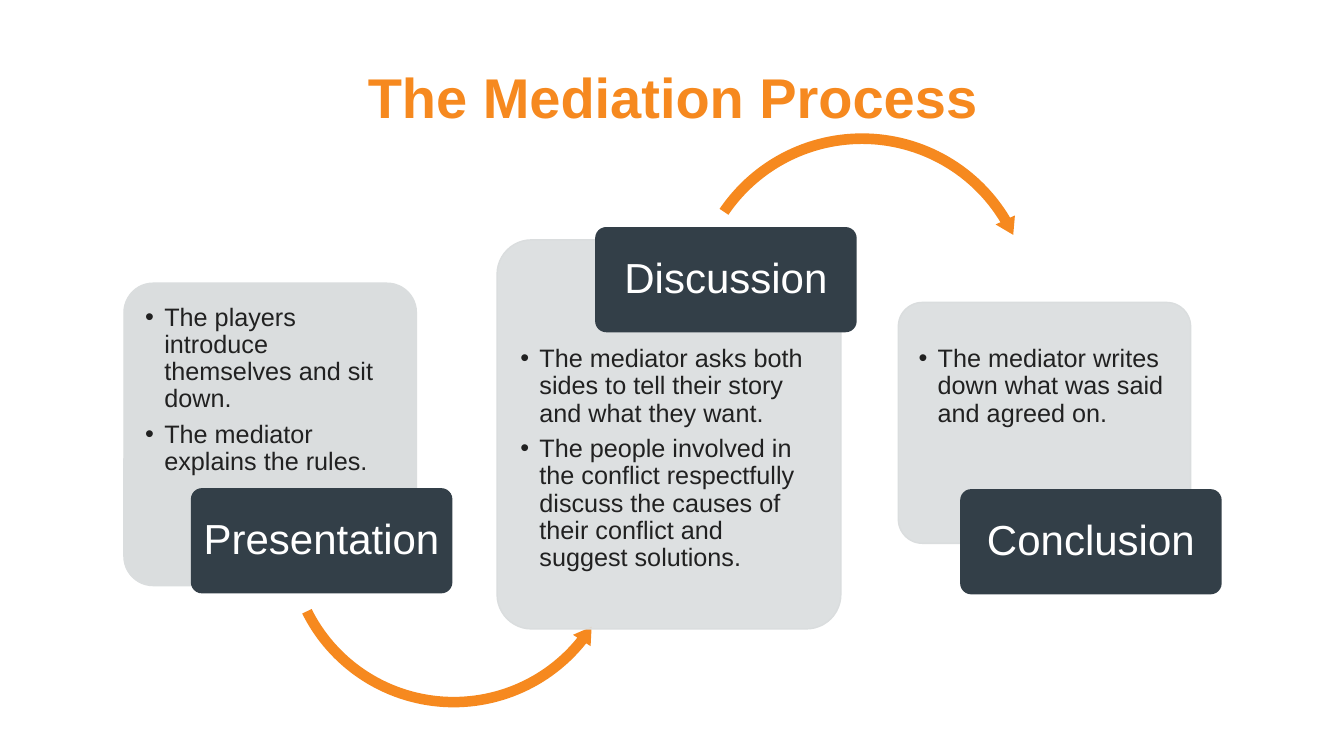
from dataclasses import dataclass

import pptx
import pptx.dml.color
import pptx.enum.shapes
import pptx.enum.text
import pptx.oxml
import pptx.oxml.ns
import pptx.util

EMU_PER_PX = 9144
ORANGE = pptx.dml.color.RGBColor(0xF6, 0x89, 0x1F)
SILVER = pptx.dml.color.RGBColor(0xDA, 0xDD, 0xDE)
SLATE = pptx.dml.color.RGBColor(0x33, 0x3F, 0x48)
INK = pptx.dml.color.RGBColor(0x21, 0x21, 0x21)
WHITE = pptx.dml.color.RGBColor(0xFF, 0xFF, 0xFF)

PRESET = pptx.enum.shapes.MSO_SHAPE
ALIGN = pptx.enum.text.PP_ALIGN
ANCHOR = pptx.enum.text.MSO_ANCHOR
COMPARISON_LAYOUT = 4
UNUSED_PLACEHOLDER = 3
LABEL_WIDTH, LABEL_HEIGHT = 258, 103
CORNER = 0.1

TITLE_FONT = {"name": "Arial", "size": pptx.util.Pt(40), "bold": True}
LABEL_FONT = {"name": "Arial", "size": pptx.util.Pt(30), "bold": False}
LIST_FONT = {"name": "Arial", "size": pptx.util.Pt(18), "bold": False}


@dataclass(frozen=True)
class Rect:
    left: int
    top: int
    width: int
    height: int


@dataclass(frozen=True)
class Arrow:
    preset: pptx.enum.shapes.MSO_SHAPE
    area: Rect
    adjustments: tuple[float, ...]


@dataclass(frozen=True)
class Stage:
    name: str
    card: Rect
    opacity: int
    list_area: Rect
    placeholder: int
    items: tuple[str, ...]
    label_left: int
    label_top: int
    arrow: Arrow | None = None


STAGES = (
    Stage(
        "Presentation", Rect(123, 281, 290, 300), 100, Rect(130, 288, 276, 222), 1,
        ("The players introduce themselves and sit down.",
         "The mediator explains the rules."),
        190, 485,
        Arrow(PRESET.LEFT_CIRCULAR_ARROW, Rect(277, 361, 346, 346),
              (0.03, 3.54, 23.16, 92.11, 0.03)),
    ),
    Stage(
        "Discussion", Rect(493, 238, 341, 386), 90, Rect(502, 329, 323, 286), 2,
        ("The mediator asks both sides to tell their story and what they want.",
         "The people involved in the conflict respectfully discuss the causes of "
         "their conflict and suggest solutions."),
        591, 226,
        Arrow(PRESET.CIRCULAR_ARROW, Rect(679, 127, 352, 352),
              (0.03, 3.48, 197.5, 128.49, 0.03)),
    ),
    Stage(
        "Conclusion", Rect(891, 300, 290, 239), 90, Rect(897, 329, 279, 154), 4,
        ("The mediator writes down what was said and agreed on.",),
        953, 486,
    ),
)


def px(length: int) -> pptx.util.Emu:
    return pptx.util.Emu(length * EMU_PER_PX)


def apply(target: object, values: dict) -> None:
    for name, value in values.items():
        setattr(target, name, value)


def place(box: object, area: Rect) -> None:
    apply(box, {"left": px(area.left), "top": px(area.top),
                "width": px(area.width), "height": px(area.height)})


def format_frame(box: object, anchor: ANCHOR, inset_x: int, inset_y: int) -> None:
    apply(box.text_frame, {
        "word_wrap": True,
        "auto_size": pptx.enum.text.MSO_AUTO_SIZE.NONE,
        "vertical_anchor": anchor,
        "margin_left": px(inset_x), "margin_right": px(inset_x),
        "margin_top": px(inset_y), "margin_bottom": px(inset_y),
    })


def write(para: object, text: str, align: ALIGN, font: dict,
          color: pptx.dml.color.RGBColor, space_after: int = 0) -> None:
    apply(para, {"alignment": align, "line_spacing": 0.9,
                 "space_before": pptx.util.Pt(0),
                 "space_after": pptx.util.Pt(space_after)})
    span = para.add_run()
    span.text = text
    apply(span.font, font)
    span.font.color.rgb = color


def add_bullet(para: object) -> None:
    properties = para._p.get_or_add_pPr()
    properties.set("marL", str(px(19)))
    properties.set("indent", str(px(-19)))
    for tag, key, value in (("a:buFont", "typeface", "Arial"), ("a:buChar", "char", "•")):
        bullet = pptx.oxml.parse_xml(f"<{tag} {pptx.oxml.ns.nsdecls('a')}/>")
        bullet.set(key, value)
        properties.append(bullet)


def add_filled(page: object, preset: PRESET, area: Rect,
               color: pptx.dml.color.RGBColor, outlined: bool) -> object:
    shape = page.shapes.add_shape(preset, px(area.left), px(area.top),
                                  px(area.width), px(area.height))
    shape.shadow.inherit = False
    shape.fill.solid()
    shape.fill.fore_color.rgb = color
    if outlined:
        shape.line.color.rgb = color
        shape.line.width = pptx.util.Pt(1)
    else:
        shape.line.fill.background()
    return shape


def add_card(page: object, stage: Stage) -> object:
    card = add_filled(page, PRESET.ROUNDED_RECTANGLE, stage.card, SILVER, True)
    card.adjustments[0] = CORNER
    if stage.opacity < 100:
        color = card.element.spPr.find(
            f"{pptx.oxml.ns.qn('a:solidFill')}/{pptx.oxml.ns.qn('a:srgbClr')}")
        color.append(pptx.oxml.parse_xml(
            f'<a:alpha {pptx.oxml.ns.nsdecls("a")} val="{stage.opacity * 1000}"/>'))
    return card


def fill_list(body: object, stage: Stage) -> None:
    place(body, stage.list_area)
    format_frame(body, ANCHOR.TOP, 14, 14)
    frame = body.text_frame
    for index, item in enumerate(stage.items):
        para = frame.add_paragraph() if index else frame.paragraphs[0]
        add_bullet(para)
        write(para, item, ALIGN.LEFT, LIST_FONT, INK, 6)


def add_arrow(page: object, arrow: Arrow) -> None:
    shape = add_filled(page, arrow.preset, arrow.area, ORANGE, False)
    for index, value in enumerate(arrow.adjustments):
        shape.adjustments[index] = value


def add_label(page: object, stage: Stage) -> None:
    area = Rect(stage.label_left, stage.label_top, LABEL_WIDTH, LABEL_HEIGHT)
    label = add_filled(page, PRESET.ROUNDED_RECTANGLE, area, SLATE, True)
    label.adjustments[0] = CORNER
    format_frame(label, ANCHOR.MIDDLE, 9, 7)
    write(label.text_frame.paragraphs[0], stage.name, ALIGN.CENTER, LABEL_FONT, WHITE)


def add_stage(page: object, stage: Stage, body: object) -> None:
    card = add_card(page, stage)
    fill_list(body, stage)
    card.element.addnext(body.element)
    if stage.arrow:
        add_arrow(page, stage.arrow)
    add_label(page, stage)


def main() -> None:
    deck = pptx.Presentation()
    deck.slide_width, deck.slide_height = px(1333), px(750)
    page = deck.slides.add_slide(deck.slide_layouts[COMPARISON_LAYOUT])
    title = page.shapes.title
    place(title, Rect(97, 70, 1140, 100))
    format_frame(title, ANCHOR.TOP, 0, 0)
    write(title.text_frame.paragraphs[0], "The Mediation Process",
          ALIGN.CENTER, TITLE_FONT, ORANGE)
    bodies = {box.placeholder_format.idx: box for box in page.placeholders}
    unused = bodies[UNUSED_PLACEHOLDER].element
    unused.getparent().remove(unused)
    for stage in STAGES:
        add_stage(page, stage, bodies[stage.placeholder])
    deck.save("out.pptx")


if __name__ == "__main__":
    main()
